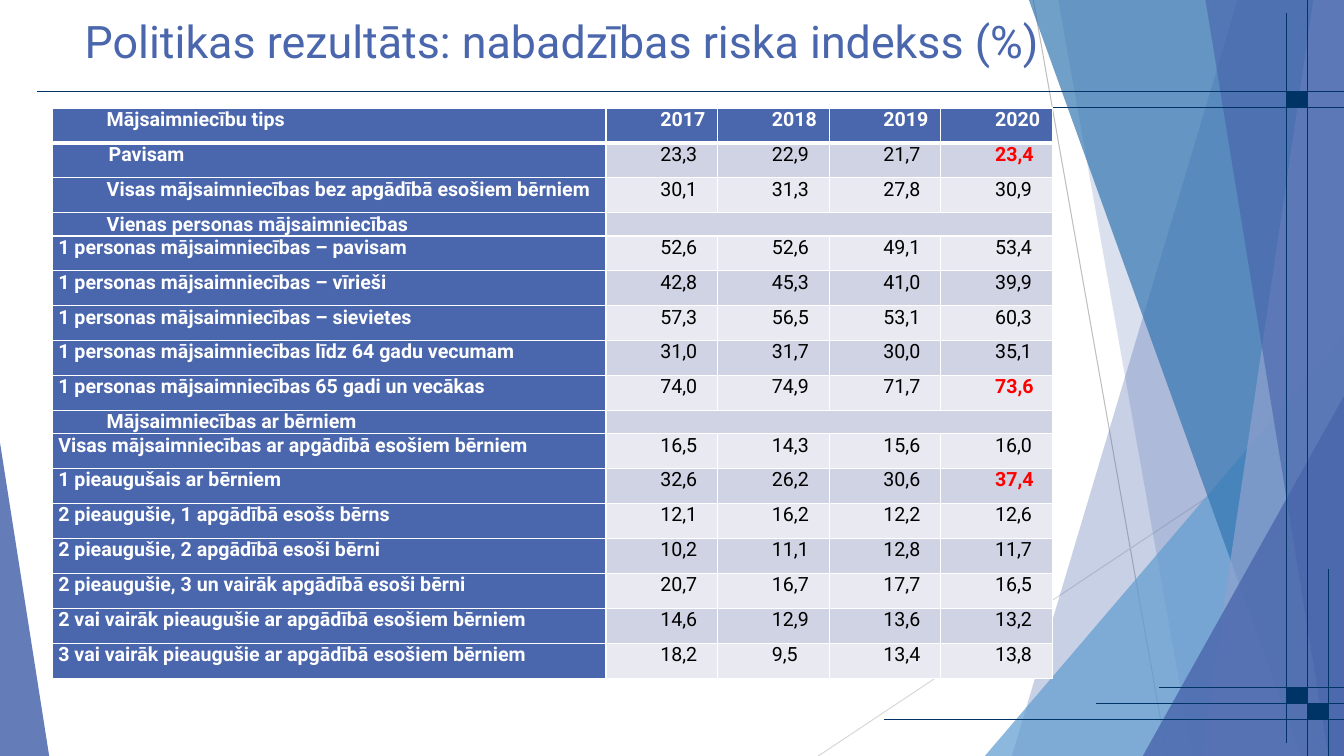
from lxml.etree import SubElement
from pptx import Presentation
from pptx.dml.color import RGBColor
from pptx.enum.shapes import MSO_CONNECTOR, MSO_SHAPE
from pptx.enum.text import MSO_ANCHOR, MSO_AUTO_SIZE, PP_ALIGN
from pptx.oxml import parse_xml
from pptx.oxml.ns import nsdecls, qn
from pptx.util import Cm, Pt

FONT = "Roboto"
BLUE = RGBColor(0x4A, 0x66, 0xAC)
SKY = RGBColor(0x62, 0x9D, 0xD1)
TEAL = RGBColor(0x34, 0x77, 0xB2)
LILAC = RGBColor(0x90, 0xA2, 0xCF)
NAVY = RGBColor(0x00, 0x33, 0x66)
GREY = RGBColor(0xBF, 0xBF, 0xBF)
PALE = RGBColor(0xD9, 0xD9, 0xD9)
BANDS = [RGBColor(0xE9, 0xEA, 0xF1), RGBColor(0xD0, 0xD3, 0xE3)]
WHITE = RGBColor(0xFF, 0xFF, 0xFF)
BLACK = RGBColor(0x00, 0x00, 0x00)
RED = RGBColor(0xFF, 0x00, 0x00)

WIDE, HIGH = 33.87, 19.05
TITLE = "Politikas rezultāts: nabadzības riska indekss (%)"
ROWS = [
    ("Mājsaimniecību tips", "2017 2018 2019 2020"),
    ("Pavisam", "23,3 22,9 21,7 23,4"),
    ("Visas mājsaimniecības bez apgādībā esošiem bērniem", "30,1 31,3 27,8 30,9"),
    ("Vienas personas mājsaimniecības", ""),
    ("1 personas mājsaimniecības – pavisam", "52,6 52,6 49,1 53,4"),
    ("1 personas mājsaimniecības – vīrieši", "42,8 45,3 41,0 39,9"),
    ("1 personas mājsaimniecības – sievietes", "57,3 56,5 53,1 60,3"),
    ("1 personas mājsaimniecības līdz 64 gadu vecumam", "31,0 31,7 30,0 35,1"),
    ("1 personas mājsaimniecības 65 gadi un vecākas", "74,0 74,9 71,7 73,6"),
    ("Mājsaimniecības ar bērniem", ""),
    ("Visas mājsaimniecības ar apgādībā esošiem bērniem", "16,5 14,3 15,6 16,0"),
    ("1 pieaugušais ar bērniem", "32,6 26,2 30,6 37,4"),
    ("2 pieaugušie, 1 apgādībā esošs bērns", "12,1 16,2 12,2 12,6"),
    ("2 pieaugušie, 2 apgādībā esoši bērni", "10,2 11,1 12,8 11,7"),
    ("2 pieaugušie, 3 un vairāk apgādībā esoši bērni", "20,7 16,7 17,7 16,5"),
    ("2 vai vairāk pieaugušie ar apgādībā esošiem bērniem", "14,6 12,9 13,6 13,2"),
    ("3 vai vairāk pieaugušie ar apgādībā esošiem bērniem", "18,2 9,5 13,4 13,8"),
]
ALERTS = {(1, 4), (8, 4), (11, 4)}


def add_line(slide, start, end, color):
    """Draw a thin straight line between two points in centimetres."""
    line = slide.shapes.add_connector(
        MSO_CONNECTOR.STRAIGHT, *[Cm(n) for n in (*start, *end)])
    line.line.color.rgb = color
    line.line.width = Pt(0.75)
    SubElement(line._element.spPr, qn("a:effectLst"))


def paint(shape, color, alpha):
    """Fill a shape with a see-through colour, without outline or shadow."""
    shape.shadow.inherit = False
    shape.fill.solid()
    shape.fill.fore_color.rgb = color
    shape.line.fill.background()
    tint = shape._element.spPr.find(qn("a:solidFill"))[0]
    SubElement(tint, qn("a:alpha")).set("val", str(alpha * 1000))


def add_blade(slide, box, top, base, color, alpha):
    """Draw a blade from its slanted left side to the right side of the box."""
    x, y, w, h = box
    spots = [(x + w, y), (x + w, y + h), (x + base, y + h)]
    path = slide.shapes.build_freeform(Cm(x + top), Cm(y), scale=1)
    path.add_line_segments([(Cm(a), Cm(b)) for a, b in spots], close=True)
    paint(path.convert_to_shape(), color, alpha)


def add_wedge(slide, box, left, top, width, tip, color, alpha):
    """Draw a right triangle that stands on the bottom of the box."""
    x, y, _, h = box
    shape = slide.shapes.add_shape(
        MSO_SHAPE.ISOSCELES_TRIANGLE,
        Cm(x + left), Cm(y + top), Cm(width), Cm(h - top))
    shape.adjustments[0] = tip
    paint(shape, color, alpha)


def add_facets(slide, box):
    """Draw the overlapping coloured facets behind the content."""
    x, y, w, h = box
    add_line(slide, (x + 26.04, y), (x + 29.41, y + h), GREY)
    add_line(slide, (x + w, y + 10.24), (x + 20.62, y + h), PALE)
    add_blade(slide, box, 31.19, 25.5, BLUE, 30)
    add_blade(slide, box, 26.67, 30.05, BLUE, 20)
    add_wedge(slide, box, 24.82, 8.46, 9.05, 1, SKY, 72)
    add_blade(slide, box, 25.93, 32.79, TEAL, 70)
    add_blade(slide, box, 33.1, 30.28, LILAC, 70)
    add_blade(slide, box, 30.38, 33.48, BLUE, 65)
    add_wedge(slide, box, 28.8, 9.98, 5.07, 1, BLUE, 80)
    add_wedge(slide, box, 0, 11.15, 1.24, 0, BLUE, 85)


def add_rules(slide, box):
    """Draw the navy rules and the squares where they cross."""
    x, y, w, h = box
    for left, top in [(0.94, 2.31), (2.01, 2.72), (29.21, 17.32),
                      (27.61, 17.73), (22.28, 18.14)]:
        add_line(slide, (x + left, y + top), (x + w, y + top), NAVY)
    for left, top, end in [(32.41, 0.33, h - 0.33), (32.94, 0, h),
                           (33.48, 14.33, h)]:
        add_line(slide, (x + left, y + top), (x + left, y + end), NAVY)
    for left, top in [(32.41, 2.31), (32.41, 17.32), (32.94, 17.73)]:
        node = slide.shapes.add_shape(
            MSO_SHAPE.RECTANGLE, Cm(x + left), Cm(y + top), Cm(0.53), Cm(0.41))
        node.shadow.inherit = False
        node.fill.solid()
        node.fill.fore_color.rgb = NAVY
        node.line.color.rgb = NAVY
        node.line.width = Pt(0.75)


def set_title(slide, box):
    """Place and format the title above the other parts."""
    title = slide.shapes.title
    title.left, title.top, title.width, title.height = [Cm(n) for n in box]
    frame = title.text_frame
    frame.text = TITLE
    frame.word_wrap = True
    frame.auto_size = MSO_AUTO_SIZE.NONE
    frame.vertical_anchor = MSO_ANCHOR.TOP
    frame.margin_top = Cm(0.24)
    para = frame.paragraphs[0]
    para.alignment = PP_ALIGN.LEFT
    font = para.runs[0].font
    font.name, font.size, font.color.rgb = FONT, Pt(32), BLUE
    slide.shapes._spTree.append(title._element)


def set_edges(cell, row):
    """Give a cell white borders, thicker below the header row."""
    props = cell._tc.get_or_add_tcPr()
    thick = {("T", 1), ("B", 0)}
    for place, side in enumerate("LRTB"):
        width = Pt(3 if (side, row) in thick else 1)
        props.insert(place, parse_xml(
            f'<a:ln{side} {nsdecls("a")} w="{width}"><a:solidFill>'
            f'<a:srgbClr val="{WHITE}"/></a:solidFill></a:ln{side}>'))


def fill_cell(cell, row, col, text):
    """Write and format one cell of the table."""
    cell.margin_left = cell.margin_right = Cm(0.1)
    cell.margin_top = cell.margin_bottom = 0
    cell.fill.solid()
    head = row == 0 or col == 0
    cell.fill.fore_color.rgb = BLUE if head else BANDS[row % 2]
    set_edges(cell, row)
    para = cell.text_frame.paragraphs[0]
    if not text:
        SubElement(para._p, qn("a:endParaRPr")).set("sz", "1000")
        return
    para.text = text
    para.alignment = PP_ALIGN.JUSTIFY
    deep = col > 0 or row < 3 or not ROWS[row][1]
    props = para._p.get_or_add_pPr()
    props.set("marL", str(Cm(1.27 if deep else 0.05)))
    props.set("indent", str(Cm(0.05 if (row, col) == (1, 0) else 0)))
    if col == 4:
        para.space_after = Pt(6)
    alert = (row, col) in ALERTS
    font = para.runs[0].font
    font.name, font.size, font.bold = FONT, Pt(14), head or alert
    font.color.rgb = WHITE if head else RED if alert else BLACK


def add_grid(slide, box):
    """Build the table of poverty risk by household type."""
    _, _, w, _ = box
    table = slide.shapes.add_table(
        len(ROWS), 5, *[Cm(n) for n in box]).table
    first = 13.95
    for col, part in enumerate(table.columns):
        part.width = Cm((w - first) / 4 if col else first)
    for row, (label, line) in enumerate(ROWS):
        table.rows[row].height = Cm(0.88 if line else 0.58)
        texts = [label] + (line.split() or [""] * 4)
        for col, text in enumerate(texts):
            fill_cell(table.cell(row, col), row, col, text)
        if not line:
            table.cell(row, 1).merge(table.cell(row, 4))


def main():
    """Build the slide and save it."""
    deck = Presentation()
    deck.slide_width, deck.slide_height = Cm(WIDE), Cm(HIGH)
    slide = deck.slides.add_slide(deck.slide_layouts[5])
    page = (0, 0, WIDE, HIGH)
    add_facets(slide, page)
    add_rules(slide, page)
    set_title(slide, (1.88, 0.1, 24.66, 2.21))
    add_grid(slide, (1.32, 2.72, 25.2, 14.36))
    deck.save("out.pptx")


if __name__ == "__main__":
    main()
